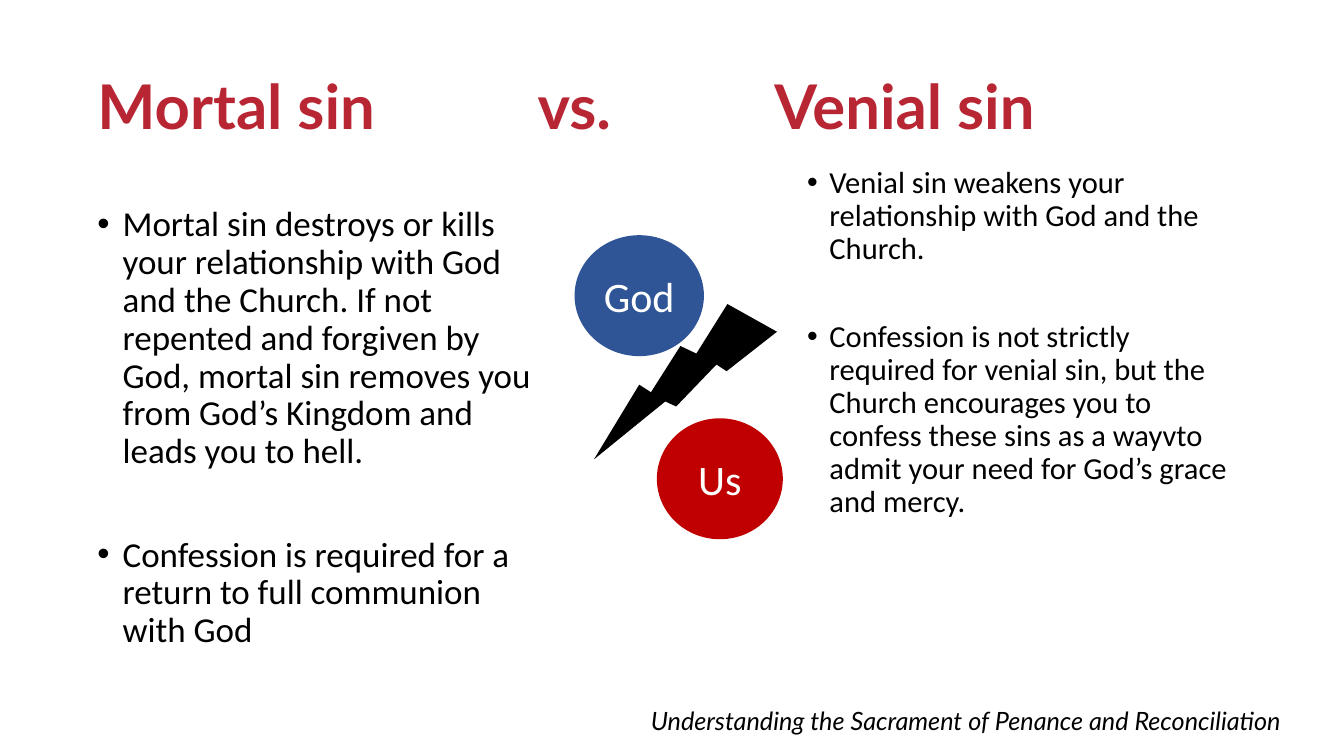
from lxml.etree import SubElement
from pptx import Presentation
from pptx.dml.color import RGBColor
from pptx.enum.shapes import MSO_SHAPE
from pptx.enum.text import MSO_ANCHOR, MSO_AUTO_SIZE, PP_ALIGN
from pptx.oxml.ns import qn
from pptx.util import Inches, Pt

CRIMSON = RGBColor(0xB8, 0x26, 0x34)
BLUE = RGBColor(0x2F, 0x55, 0x97)
RED = RGBColor(0xC0, 0x00, 0x00)
BLACK = RGBColor(0x00, 0x00, 0x00)
WHITE = RGBColor(0xFF, 0xFF, 0xFF)

presentation = Presentation()
presentation.slide_width = Inches(13.33)
presentation.slide_height = Inches(7.5)
column = presentation.slide_width / 160
row = presentation.slide_height / 90
slide = presentation.slides.add_slide(presentation.slide_layouts[3])
title, mortal_body, venial_body = slide.placeholders


def place(shape, left, top, width, height):
    shape.left, shape.width = round(left * column), round(width * column)
    shape.top, shape.height = round(top * row), round(height * row)
    frame = shape.text_frame
    frame.word_wrap = True
    frame.auto_size = MSO_AUTO_SIZE.NONE
    frame.margin_left = frame.margin_right = Inches(0.05)
    frame.margin_top = frame.margin_bottom = Inches(0.05)
    return frame


def write(paragraph, text, size, font_name, color, alignment=PP_ALIGN.LEFT):
    paragraph.text = text
    paragraph.alignment = alignment
    paragraph.font.size = Pt(size)
    paragraph.font.name = font_name
    paragraph.font.color.rgb = color


title_frame = place(title, 11, 4.3, 138, 17.4)
title_frame.vertical_anchor = MSO_ANCHOR.MIDDLE
heading = title_frame.paragraphs[0]
heading.line_spacing = 0.9
heading_properties = heading._p.get_or_add_pPr()
tab_list = SubElement(heading_properties, qn("a:tabLst"))
for tab_column in (52.4, 80.6):
    SubElement(tab_list, qn("a:tab"), pos=str(round(tab_column * column)), algn="l")
write(heading, "Mortal sin\tvs.\tVenial sin", 44, "Lato", CRIMSON)
heading.font.bold = True

columns = (
    (mortal_body, (11, 24, 54.1, 57.1), 25, 0.25, (10, 47), (
        "Mortal sin destroys or kills your relationship with God and the Church. "
        "If not repented and forgiven by God, mortal sin removes you from God’s "
        "Kingdom and leads you to hell.",
        "Confession is required for a return to full communion with God",
    )),
    (venial_body, (95.5, 19.3, 52.9, 57.1), 21.8, 0.22, (8, 39.5), (
        "Venial sin weakens your relationship with God and the Church.",
        "Confession is not strictly required for venial sin, but the Church "
        "encourages you to confess these sins as a wayvto admit your need for "
        "God’s grace and mercy.",
    )),
)
for body, box, size, indent, gaps, points in columns:
    frame = place(body, *box)
    frame.add_paragraph()
    for paragraph, gap, point in zip(frame.paragraphs, gaps, points):
        write(paragraph, point, size, "Calibri", BLACK)
        paragraph.line_spacing = 0.9
        paragraph.space_before = Pt(gap)
        properties = paragraph._p.get_or_add_pPr()
        properties.set("marL", str(Inches(indent)))
        properties.set("indent", str(-Inches(indent)))

footer = slide.shapes.add_textbox(0, 0, 0, 0)
footer_line = place(footer, 59.6, 83.4, 93.5, 7.9).paragraphs[0]
write(footer_line, "Understanding the Sacrament of Penance and Reconciliation",
      18, "Lato", BLACK, PP_ALIGN.RIGHT)
footer_line.font.italic = True

bolt_corners = [
    (92.5, 39.5), (86.5, 44.2), (85.3, 43.4), (80.5, 48.4), (79.2, 47.8), (70.7, 54.7),
    (76.1, 45.8), (77.5, 46.7), (81, 41.2), (82.9, 42.1), (86.6, 36.2),
]
corners = [(round(x * column), round(y * row)) for x, y in bolt_corners]
builder = slide.shapes.build_freeform(*corners[0])
builder.add_line_segments(corners[1:], close=True)
bolt = builder.convert_to_shape()
bolt.shadow.inherit = False
bolt.fill.solid()
bolt.fill.fore_color.rgb = BLACK
bolt.line.fill.background()

circles = (
    ("God", BLUE, (68.4, 28, 15.4, 14.4)),
    ("Us", RED, (78.2, 49.8, 15, 14.4)),
)
for name, color, box in circles:
    circle = slide.shapes.add_shape(MSO_SHAPE.OVAL, 0, 0, 0, 0)
    circle.shadow.inherit = False
    circle.fill.solid()
    circle.fill.fore_color.rgb = color
    circle.line.fill.background()
    frame = place(circle, *box)
    frame.vertical_anchor = MSO_ANCHOR.MIDDLE
    write(frame.paragraphs[0], name, 30, "Calibri", WHITE, PP_ALIGN.CENTER)

presentation.save("out.pptx")
